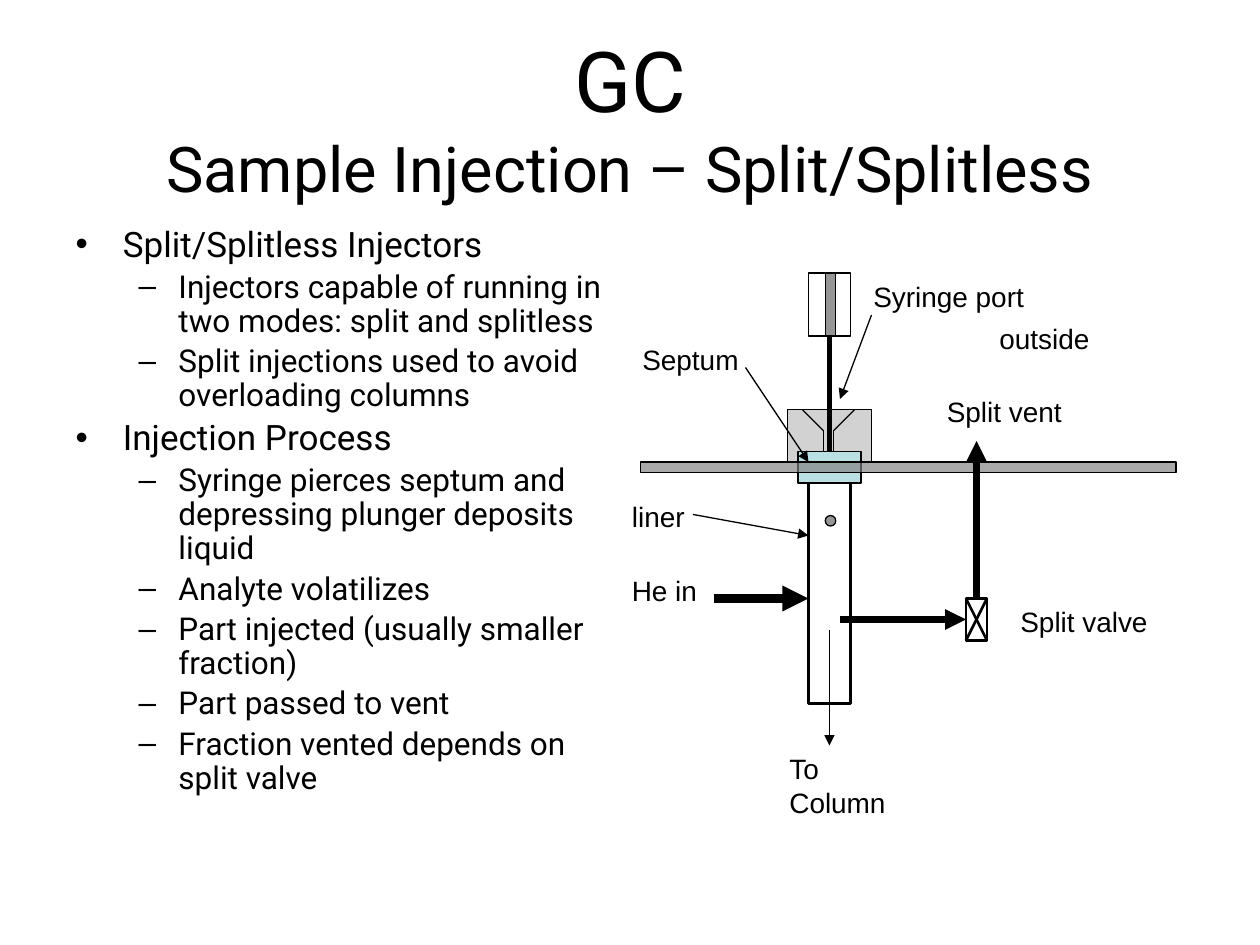
from lxml import etree
from pptx import Presentation
from pptx.dml.color import RGBColor
from pptx.enum.shapes import MSO_CONNECTOR, MSO_SHAPE
from pptx.enum.text import MSO_ANCHOR, MSO_AUTO_SIZE, PP_ALIGN
from pptx.oxml.ns import qn
from pptx.util import Pt

RECT, OVAL = MSO_SHAPE.RECTANGLE, MSO_SHAPE.OVAL
LINE = MSO_CONNECTOR.STRAIGHT
MID, CENTER, FIXED = MSO_ANCHOR.MIDDLE, PP_ALIGN.CENTER, MSO_AUTO_SIZE.NONE
PX = 7620  # 120 px to the inch
BLACK = "000000"

prs = Presentation()
prs.slide_width, prs.slide_height = 1200 * PX, 900 * PX
slide = prs.slides.add_slide(prs.slide_layouts[1])
shapes = slide.shapes


def hue(color):
    return RGBColor.from_string(color)


def write(par, text, size=16, face="Arial", color=BLACK):
    """Add text to a paragraph as one formatted run."""
    run = par.add_run()
    run.text = text
    run.font.size, run.font.name = Pt(size), face
    run.font.color.rgb = hue(color)


# Title
title = shapes.title
title.left, title.top, title.width, title.height = [n * PX for n in (60, 36, 1080, 150)]
frame = title.text_frame
frame.auto_size, frame.vertical_anchor = FIXED, MID
par = frame.paragraphs[0]
par.alignment = CENTER
write(par, "GC", size=48, face="Roboto")
par.add_line_break()
write(par, "Sample Injection – Split/Splitless", size=36, face="Roboto")

# Bullet list
body = slide.placeholders[1]
body.left, body.top, body.width, body.height = [n * PX for n in (60, 210, 534, 594)]
frame = body.text_frame
frame.auto_size = FIXED
items = [
    (0, "Split/Splitless Injectors"),
    (1, "Injectors capable of running in two modes: split and splitless"),
    (1, "Split injections used to avoid overloading columns"),
    (0, "Injection Process"),
    (1, "Syringe pierces septum and depressing plunger deposits liquid"),
    (1, "Analyte volatilizes"),
    (1, "Part injected (usually smaller fraction)"),
    (1, "Part passed to vent"),
    (1, "Fraction vented depends on split valve"),
]
for i, (level, text) in enumerate(items):
    par = frame.add_paragraph() if i else frame.paragraphs[0]
    par.level, par.line_spacing = level, 0.9
    left, hang = [(45, 45), (98, 38)][level]
    props = par._p.get_or_add_pPr()
    props.set("marL", str(left * PX))
    props.set("indent", str(-hang * PX))
    write(par, text, size=[20, 18][level], face="Roboto")

# Injector parts, back to front: kind, place, fill, opacity in %, line width
parts = [
    (RECT, (750, 390, 80, 50), "333333", 22, 0.75),   # port
    (RECT, (760, 430, 60, 30), "BBE0E3", 100, 0.75),  # septum
    (RECT, (610, 440, 510, 10), "808080", 67, 0.75),  # wall
    (RECT, (770, 460, 40, 210), None, 100, 1.5),      # liner
    (RECT, (920, 570, 20, 40), None, 100, 1.5),       # valve
    (RECT, (770, 260, 40, 60), "FFFFFF", 100, 0.75),  # barrel
    (RECT, (786, 260, 10, 60), "969696", 100, 0.75),  # plunger
    (OVAL, (786, 491, 10, 10), "969696", 100, 0.75),  # drop
]
for kind, place, fill, alpha, width in parts:
    part = shapes.add_shape(kind, *[n * PX for n in place])
    part.shadow.inherit = False
    part.line.color.rgb, part.line.width = hue(BLACK), Pt(width)
    if fill is None:
        part.fill.background()
        continue
    part.fill.solid()
    part.fill.fore_color.rgb = hue(fill)
    if alpha < 100:
        tint = part._element.spPr.find(qn("a:solidFill"))[0]
        etree.SubElement(tint, qn("a:alpha")).set("val", str(alpha * 1000))

# Lines: start and end, width, arrowhead
lines = [
    ((764, 390, 784, 410), 0.75, False),  # funnel
    ((784, 410, 784, 430), 0.75, False),
    ((794, 430, 794, 410), 0.75, False),
    ((794, 410, 814, 390), 0.75, False),
    ((920, 570, 940, 610), 1.5, False),   # valve cross
    ((940, 570, 920, 610), 1.5, False),
    ((790, 320, 790, 430), 3, False),     # needle
    ((710, 350, 770, 440), 0.75, True),   # septum label
    ((830, 300, 800, 380), 0.75, True),   # port label
    ((660, 490, 770, 510), 0.75, True),   # liner label
    ((680, 570, 770, 570), 5, True),      # helium
    ((800, 590, 920, 590), 4, True),      # to valve
    ((930, 570, 930, 420), 4, True),      # to vent
    ((790, 600, 790, 710), 1, True),      # to column
]
for ends, width, arrow in lines:
    line = shapes.add_connector(LINE, *[n * PX for n in ends])
    line.line.color.rgb, line.line.width = hue(BLACK), Pt(width)
    if arrow:
        etree.SubElement(line.line._get_or_add_ln(), qn("a:tailEnd")).set("type", "triangle")
    etree.SubElement(line._element.spPr, qn("a:effectLst"))

# Labels: left, top, width, height
labels = [
    ("outside", (940, 300, 160, 44)),
    ("Septum", (600, 320, 130, 44)),
    ("Syringe port", (820, 260, 190, 44)),
    ("He in", (590, 540, 130, 44)),
    ("To Column", (740, 710, 140, 77)),
    ("Split vent", (890, 370, 170, 44)),
    ("Split valve", (960, 570, 210, 44)),
    ("liner", (590, 470, 140, 44)),
]
for text, place in labels:
    frame = shapes.add_textbox(*[n * PX for n in place]).text_frame
    frame.word_wrap = True
    write(frame.paragraphs[0], text)

prs.save("out.pptx")
